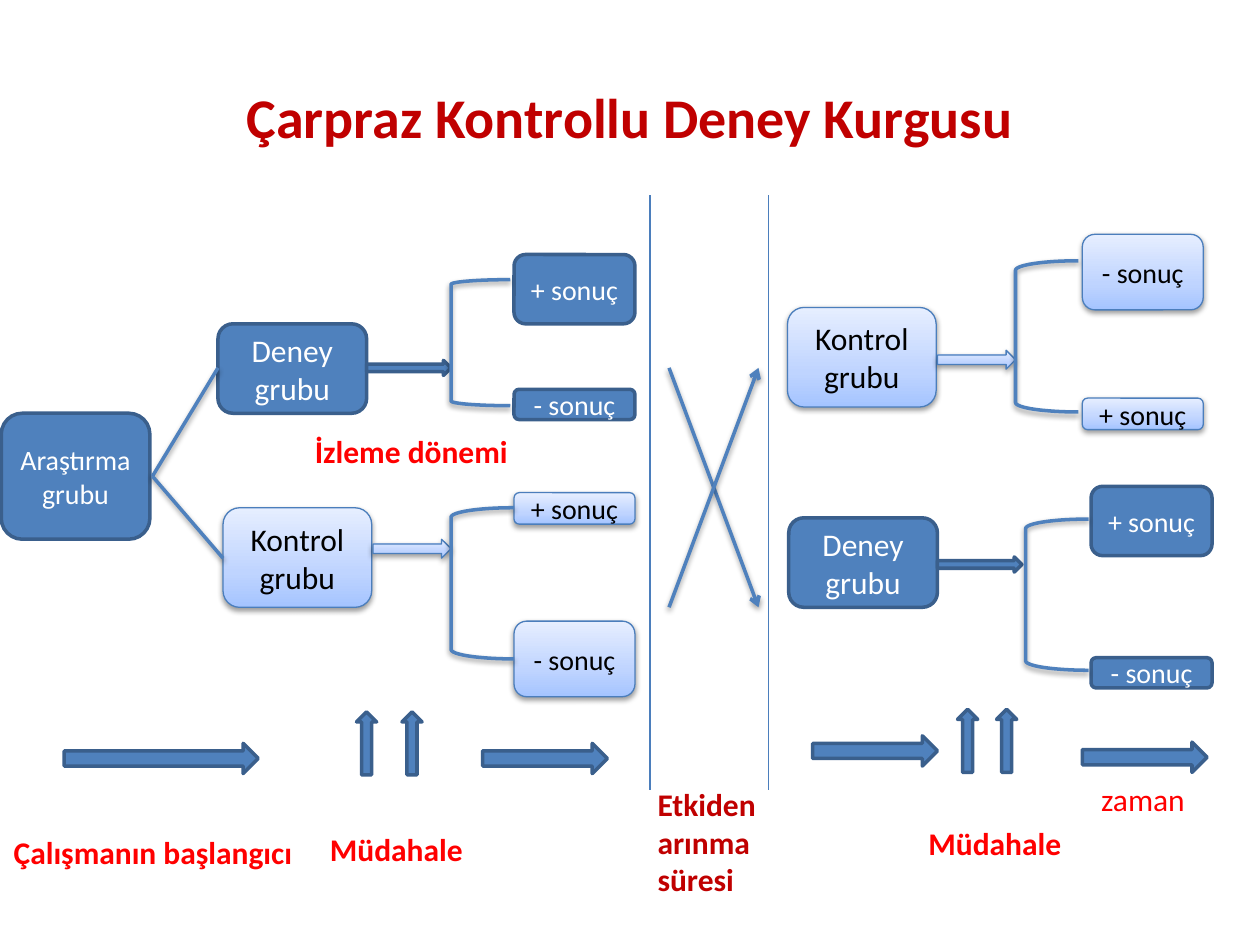
from copy import deepcopy
from dataclasses import dataclass

from lxml.etree import SubElement
from pptx import Presentation
from pptx.dml.color import RGBColor
from pptx.enum.shapes import MSO_CONNECTOR, MSO_SHAPE
from pptx.enum.text import MSO_ANCHOR, PP_ALIGN
from pptx.oxml.ns import qn
from pptx.util import Inches, Pt

BLUE = RGBColor(0x4F, 0x81, 0xBD)
DARK_BLUE = RGBColor(0x3A, 0x5F, 0x8C)
THIN_BLUE = RGBColor(0x4B, 0x7E, 0xBC)
WHITE = RGBColor(0xFF, 0xFF, 0xFF)
BLACK = RGBColor(0, 0, 0)
RED = RGBColor(0xFF, 0, 0)
DARK_RED = RGBColor(0xC0, 0, 0)
PALE_STOPS = (
    (0, RGBColor(0xA4, 0xC4, 0xFF)),
    (0.35, RGBColor(0xBF, 0xD4, 0xFF)),
    (1, RGBColor(0xE6, 0xEE, 0xFF)),
)
FONT = "Calibri"


@dataclass(frozen=True)
class Style:
    """Look of one study arm: solid for the treated, pale for the controls."""
    pale: bool
    line: RGBColor
    width: float
    text: RGBColor


TREATED = Style(False, DARK_BLUE, 2, WHITE)
CONTROL = Style(True, THIN_BLUE, 0.75, BLACK)


@dataclass(frozen=True)
class Block:
    left: float
    top: float
    width: float
    height: float
    style: Style = TREATED
    text: str = ""
    size: int = 16
    kind: MSO_SHAPE = MSO_SHAPE.ROUNDED_RECTANGLE


@dataclass(frozen=True)
class Label:
    left: float
    top: float
    width: float
    height: float
    text: str
    color: RGBColor = RED
    bold: bool = True


@dataclass(frozen=True)
class Link:
    start: tuple[float, float]
    end: tuple[float, float]
    arrow: bool = False
    divider: bool = False


def group(left: float, top: float, style: Style) -> Block:
    if style.pale:
        return Block(left, top, 1.18, 0.79, style, "Kontrol grubu", 18)
    return Block(left, top, 1.18, 0.71, style, "Deney grubu", 18)


def outcome(left: float, top: float, height: float, style: Style, sign: str) -> Block:
    return Block(left, top, 0.96, height, style, f"{sign} sonuç")


def arrow(left: float, top: float, width: float, height: float, style: Style = TREATED) -> Block:
    return Block(left, top, width, height, style, kind=MSO_SHAPE.RIGHT_ARROW)


def intervention(left: float, top: float) -> Block:
    return Block(left, top, 0.16, 0.5, kind=MSO_SHAPE.UP_ARROW)


BLOCKS = [
    Block(0.01, 3.28, 1.18, 1, text="Araştırma grubu"),
    # First period
    group(1.73, 2.57, TREATED),
    group(1.77, 4.03, CONTROL),
    outcome(4.08, 2.02, 0.55, TREATED, "+"),
    outcome(4.08, 3.09, 0.24, TREATED, "-"),
    outcome(4.08, 4.93, 0.6, CONTROL, "-"),
    outcome(4.08, 3.91, 0.25, CONTROL, "+"),
    arrow(2.91, 2.86, 0.67, 0.12),
    arrow(2.96, 4.28, 0.62, 0.15, CONTROL),
    # Second period
    group(6.26, 4.11, TREATED),
    group(6.25, 2.44, CONTROL),
    outcome(8.66, 3.86, 0.55, TREATED, "+"),
    outcome(8.66, 5.22, 0.24, TREATED, "-"),
    outcome(8.59, 3.16, 0.25, CONTROL, "+"),
    outcome(8.59, 1.86, 0.6, CONTROL, "-"),
    arrow(7.44, 2.78, 0.62, 0.15, CONTROL),
    arrow(7.44, 4.42, 0.67, 0.12),
    # Time line
    arrow(0.51, 5.9, 1.54, 0.24),
    arrow(3.83, 5.9, 0.99, 0.24),
    arrow(6.45, 5.84, 0.99, 0.24),
    arrow(8.59, 5.89, 0.99, 0.24),
    intervention(2.83, 5.65),
    intervention(3.19, 5.65),
    intervention(7.6, 5.63),
    intervention(7.91, 5.63),
]
# left, top, width, height, curve
BRACKETS = [
    (3.58, 2.22, 0.47, 1, 0.08),
    (3.58, 4.03, 0.5, 1.2, 0.15),
    (8.14, 4.12, 0.5, 1.2, 0.15),
    (8.06, 2.07, 0.5, 1.2, 0.15),
]
LINKS = [
    Link((1.21, 3.78), (1.73, 2.92)),
    Link((1.21, 3.78), (1.77, 4.43)),
    Link((5.16, 1.55), (5.16, 6.27), divider=True),
    Link((6.1, 1.55), (6.1, 6.27), divider=True),
    Link((5.31, 2.92), (6.02, 4.82), arrow=True),
    Link((5.31, 4.82), (6.02, 2.92), arrow=True),
]
LABELS = [
    Label(2.4, 3.38, 1.74, 0.4, "İzleme dönemi"),
    Label(0.01, 6.56, 2.43, 0.4, "Çalışmanın başlangıcı"),
    Label(2.52, 6.54, 1.26, 0.4, "Müdahale"),
    Label(7.27, 6.49, 1.26, 0.4, "Müdahale"),
    Label(8.64, 6.14, 0.87, 0.4, "zaman", bold=False),
    Label(5.12, 6.18, 0.99, 1.01, "Etkiden\narınma\nsüresi", DARK_RED),
]


def cast_shadow(effects) -> None:
    shadow = SubElement(effects, qn("a:outerShdw"), blurRad="40000", dist="20000",
                        dir="5400000", rotWithShape="0")
    color = SubElement(shadow, qn("a:srgbClr"), val="000000")
    SubElement(color, qn("a:alpha"), val="38000")


def format_text(frame, size: int, color: RGBColor, bold: bool = False, align=None) -> None:
    for paragraph in frame.paragraphs:
        paragraph.alignment = align
        for run in paragraph.runs:
            run.font.name, run.font.size = FONT, Pt(size)
            run.font.bold, run.font.color.rgb = bold, color


def add_preset(slide, kind, left: float, top: float, width: float, height: float,
               line: RGBColor, line_width: float, shadowed: bool):
    shape = slide.shapes.add_shape(kind, Inches(left), Inches(top), Inches(width), Inches(height))
    shape.line.color.rgb, shape.line.width = line, Pt(line_width)
    shape.shadow.inherit = False
    if shadowed:
        cast_shadow(shape._element.spPr.find(qn("a:effectLst")))
    return shape


def fill_pale(shape) -> None:
    shape.fill.gradient()
    shape.fill.gradient_angle = 90
    stops = shape._element.spPr.find(".//" + qn("a:gsLst"))
    stops.insert(1, deepcopy(stops[0]))
    for stop, (position, color) in zip(shape.fill.gradient_stops, PALE_STOPS):
        stop.position, stop.color.rgb = position, color


def add_block(slide, block: Block) -> None:
    style = block.style
    shape = add_preset(slide, block.kind, block.left, block.top, block.width, block.height,
                       style.line, style.width, style.pale)
    if style.pale:
        fill_pale(shape)
    else:
        shape.fill.solid()
        shape.fill.fore_color.rgb = BLUE
    if block.text:
        shape.text_frame.text = block.text
        shape.text_frame.vertical_anchor = MSO_ANCHOR.MIDDLE
        format_text(shape.text_frame, block.size, style.text, align=PP_ALIGN.CENTER)


def add_link(slide, link: Link) -> None:
    line = slide.shapes.add_connector(MSO_CONNECTOR.STRAIGHT,
                                      *map(Inches, link.start), *map(Inches, link.end))
    line.line.color.rgb = THIN_BLUE if link.divider else BLUE
    line.line.width = Pt(0.75 if link.divider else 2)
    if link.arrow:
        SubElement(line.line._get_or_add_ln(), qn("a:tailEnd"), type="arrow")
    effects = SubElement(line._element.spPr, qn("a:effectLst"))
    if not link.divider:
        cast_shadow(effects)


def add_label(slide, label: Label) -> None:
    box = slide.shapes.add_textbox(*map(Inches, (label.left, label.top, label.width, label.height)))
    box.text_frame.text = label.text
    box.text_frame.word_wrap = False
    format_text(box.text_frame, 18, label.color, label.bold)


def main() -> None:
    deck = Presentation()
    deck.slide_width, deck.slide_height = Inches(10), Inches(7.5)
    slide = deck.slides.add_slide(deck.slide_layouts[6])
    title = slide.shapes.add_textbox(Inches(0.5), Inches(0.3), Inches(9), Inches(1.25)).text_frame
    title.text = "Çarpraz Kontrollu Deney Kurgusu"
    title.word_wrap, title.vertical_anchor = True, MSO_ANCHOR.MIDDLE
    format_text(title, 32, DARK_RED, True, PP_ALIGN.CENTER)
    for block in BLOCKS:
        add_block(slide, block)
    for *place, curve in BRACKETS:
        bracket = add_preset(slide, MSO_SHAPE.LEFT_BRACKET, *place, BLUE, 2, True)
        bracket.fill.background()
        bracket.adjustments[0] = curve
    for link in LINKS:
        add_link(slide, link)
    for label in LABELS:
        add_label(slide, label)
    deck.save("out.pptx")


if __name__ == "__main__":
    main()
